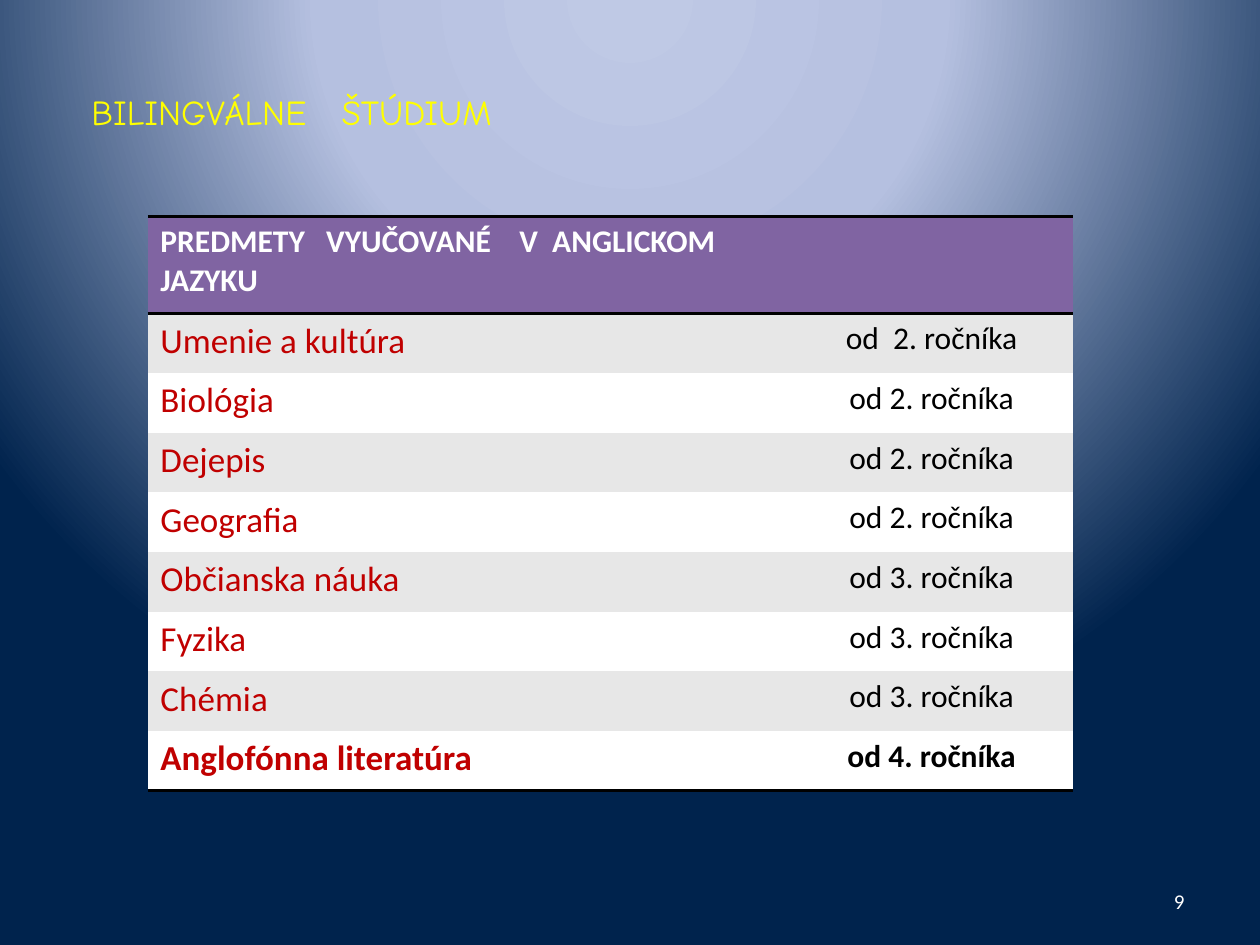
from lxml import etree
from pptx import Presentation
from pptx.dml.color import RGBColor
from pptx.enum.text import MSO_ANCHOR, MSO_AUTO_SIZE, PP_ALIGN
from pptx.oxml import parse_xml
from pptx.oxml.ns import qn
from pptx.util import Pt

LEFT, CENTER, RIGHT = PP_ALIGN.LEFT, PP_ALIGN.CENTER, PP_ALIGN.RIGHT
TOP, MIDDLE = MSO_ANCHOR.TOP, MSO_ANCHOR.MIDDLE
TITLE_ONLY = 5
PLAIN_TABLE_STYLE = "{2D5ABB26-0587-4C30-8999-92F81FD0307C}"
DRAWING_NS = "http://schemas.openxmlformats.org/drawingml/2006/main"

COLORS = {
    "title": "FFFF00", "white": "FFFFFF", "black": "000000",
    "header": "8064A2", "band": "E7E7E7", "subject": "C00000",
    "glow": "BFC9E5", "haze": "B5C0E0", "night": "00234D",
}
HEADING = "PREDMETY   VYUČOVANÉ    V  ANGLICKOM  JAZYKU"
SUBJECTS = [
    ("Umenie a kultúra", "od  2. ročníka"),
    ("Biológia", "od 2. ročníka"),
    ("Dejepis", "od 2. ročníka"),
    ("Geografia", "od 2. ročníka"),
    ("Občianska náuka", "od 3. ročníka"),
    ("Fyzika", "od 3. ročníka"),
    ("Chémia", "od 3. ročníka"),
    ("Anglofónna literatúra", "od 4. ročníka"),
]


def write(frame, text, size, color, font="Calibri", bold=False, align=LEFT):
    frame.word_wrap = True
    paragraph = frame.paragraphs[0]
    paragraph.alignment = align
    run = paragraph.add_run()
    run.text = text
    run.font.size = Pt(size)
    run.font.name = font
    run.font.bold = bold
    run.font.color.rgb = RGBColor.from_string(COLORS[color])


def paint_background(slide):
    """Radial glow centred above the top edge."""
    slide.background.fill.gradient()
    gradient = next(slide.background._cSld.iter(qn("a:gradFill")))
    stops = "".join(
        f'<a:gs pos="{percent * 1000}"><a:srgbClr val="{COLORS[name]}"/></a:gs>'
        for percent, name in [(0, "glow"), (40, "haze"), (100, "night")])
    radial = parse_xml(
        f'<a:gradFill xmlns:a="{DRAWING_NS}" rotWithShape="1">'
        f'<a:gsLst>{stops}</a:gsLst><a:path path="circle">'
        '<a:fillToRect l="50000" t="-80000" r="50000" b="180000"/>'
        '</a:path></a:gradFill>')
    gradient.getparent().replace(gradient, radial)


def place_title(slide, left, top, width, height):
    title = slide.shapes.title
    title.left, title.top = Pt(left), Pt(top)
    title.width, title.height = Pt(width), Pt(height)
    frame = title.text_frame
    frame.auto_size = MSO_AUTO_SIZE.NONE
    frame.vertical_anchor = TOP
    write(frame, "BILINGVÁLNE   ŠTÚDIUM", 20, "title", font="Comic Neue")


def place_page_number(slide, left, top, width, height):
    number = slide.shapes.add_textbox(Pt(left), Pt(top), Pt(width), Pt(height))
    number.text_frame.vertical_anchor = MIDDLE
    write(number.text_frame, "9", 12, "white", align=RIGHT)


def rule_cell(cell, edges):
    """Draw black rules on the given edges (lnT, lnB); call before filling."""
    properties = cell._tc.get_or_add_tcPr()
    for edge in edges:
        line = etree.SubElement(properties, qn(f"a:{edge}"), w=str(Pt(2)))
        fill = etree.SubElement(line, qn("a:solidFill"))
        etree.SubElement(fill, qn("a:srgbClr"), val=COLORS["black"])


def fill_cell(cell, color):
    cell.fill.solid()
    cell.fill.fore_color.rgb = RGBColor.from_string(COLORS[color])


def place_subject_table(slide, left, top, width, height):
    header_height, year_width = 55.4, 161.3
    table = slide.shapes.add_table(len(SUBJECTS) + 1, 2, Pt(left), Pt(top),
                                   Pt(width), Pt(height)).table
    table._tbl.tblPr.find(qn("a:tableStyleId")).text = PLAIN_TABLE_STYLE
    table.columns[0].width = Pt(width - year_width)
    table.columns[1].width = Pt(year_width)
    table.rows[0].height = Pt(header_height)

    for cell in table.rows[0].cells:
        rule_cell(cell, ["lnT", "lnB"])
        fill_cell(cell, "header")
    write(table.cell(0, 0).text_frame, HEADING, 18, "white", bold=True)

    for row, (subject, year) in enumerate(SUBJECTS, start=1):
        table.rows[row].height = Pt((height - header_height) / len(SUBJECTS))
        last = row == len(SUBJECTS)
        for cell in table.rows[row].cells:
            rule_cell(cell, ["lnB"] if last else [])
            fill_cell(cell, "band" if row % 2 else "white")
        write(table.cell(row, 0).text_frame, subject, 20, "subject", bold=last)
        write(table.cell(row, 1).text_frame, year, 18, "black", bold=last,
              align=CENTER)


def main():
    deck = Presentation()
    deck.slide_width, deck.slide_height = Pt(720), Pt(540)
    slide = deck.slides.add_slide(deck.slide_layouts[TITLE_ONLY])
    paint_background(slide)
    place_page_number(slide, 516, 500.5, 168, 28.8)
    place_title(slide, 45, 48, 630, 96)
    place_subject_table(slide, 84.5, 123.8, 528.5, 328)
    deck.save("out.pptx")


if __name__ == "__main__":
    main()
